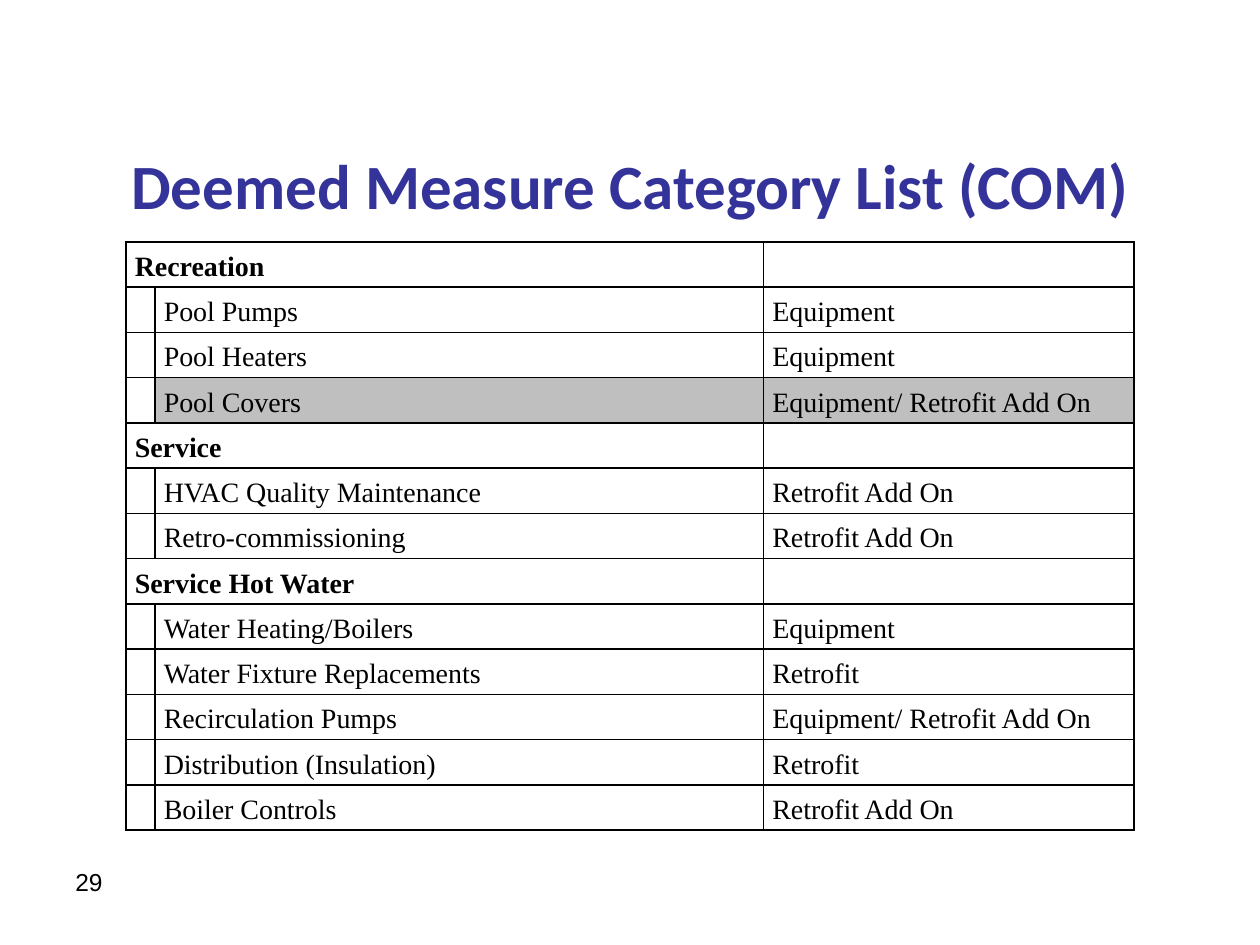
from pptx import Presentation
from pptx.dml.color import RGBColor as RGB
from pptx.enum.text import MSO_ANCHOR as Anchor, PP_ALIGN as Align
from pptx.oxml import parse_xml
from pptx.oxml.ns import nsdecls
from pptx.util import Inches, Pt

COLORS = {"ink": "000000", "title": "333399", "shade": "BFBFBF", "paper": "FFFFFF"}
GROUPS = {
    "Recreation": [
        ("Pool Pumps", "Equipment"),
        ("Pool Heaters", "Equipment"),
        ("Pool Covers", "Equipment/ Retrofit Add On"),
    ],
    "Service": [
        ("HVAC Quality Maintenance", "Retrofit Add On"),
        ("Retro-commissioning", "Retrofit Add On"),
    ],
    "Service Hot Water": [
        ("Water Heating/Boilers", "Equipment"),
        ("Water Fixture Replacements", "Retrofit"),
        ("Recirculation Pumps", "Equipment/ Retrofit Add On"),
        ("Distribution (Insulation)", "Retrofit"),
        ("Boiler Controls", "Retrofit Add On"),
    ],
}
SHADED = "Pool Covers"


class Deck:
    """Holds the style and the current slide."""

    def __init__(self):
        self.show = Presentation()
        self.show.slide_width, self.show.slide_height = Inches(10), Inches(7.5)
        self.slide = self.show.slides.add_slide(self.show.slide_layouts[6])

    def style(self, para, face, size, color="ink", bold=False):
        font = para.font
        font.name, font.size, font.bold = face, Pt(size), bold
        font.color.rgb = RGB.from_string(COLORS[color])

    def text(self, words, box, face, size, color="ink", bold=False,
             align=Align.LEFT, anchor=Anchor.TOP):
        frame = self.slide.shapes.add_textbox(*map(Inches, box)).text_frame
        frame.word_wrap = True
        frame.vertical_anchor = anchor
        para = frame.paragraphs[0]
        para.text, para.alignment = words, align
        self.style(para, face, size, color, bold)

    def cell(self, cell, words, bold, fill):
        cell.margin_left = cell.margin_right = Inches(0.07)
        cell.margin_top = cell.margin_bottom = 0
        cell.vertical_anchor = Anchor.MIDDLE
        para = cell.text_frame.paragraphs[0]
        para.text, para.line_spacing = words, 1.15
        self.style(para, "Times New Roman", 16, bold=bold)
        props = cell._tc.get_or_add_tcPr()
        for side in "LRTB":
            props.append(parse_xml(
                f'<a:ln{side} {nsdecls("a")} w="{Pt(1)}"><a:solidFill>'
                f'<a:srgbClr val="{COLORS["ink"]}"/></a:solidFill></a:ln{side}>'))
        cell.fill.solid()
        cell.fill.fore_color.rgb = RGB.from_string(COLORS[fill])

    def table(self, groups, box, widths):
        rows = []
        for name, items in groups.items():
            rows.append((name, "", ""))
            rows.extend(("", *item) for item in items)
        shape = self.slide.shapes.add_table(
            len(rows), len(widths), *map(Inches, box))
        grid = shape.table
        for col, width in zip(grid.columns, widths):
            col.width = Inches(width)
        for r, row in enumerate(rows):
            for c, words in enumerate(row):
                shade = c > 0 and row[1] == SHADED
                self.cell(grid.cell(r, c), words, bool(row[0]),
                          "shade" if shade else "paper")
            if row[0]:
                grid.cell(r, 0).merge(grid.cell(r, 1))


def main():
    deck = Deck()
    deck.text("29", (0.5, 6.83, 1.83, 0.52), "Arial", 14)
    deck.text("Deemed Measure Category List (COM)", (0.5, 0.92, 9, 1.08),
              "Calibri", 36, "title", True, Align.CENTER, Anchor.MIDDLE)
    deck.table(GROUPS, (1, 1.92, 8, 4.67), (0.23, 4.83, 2.94))
    deck.show.save("out.pptx")


if __name__ == "__main__":
    main()
